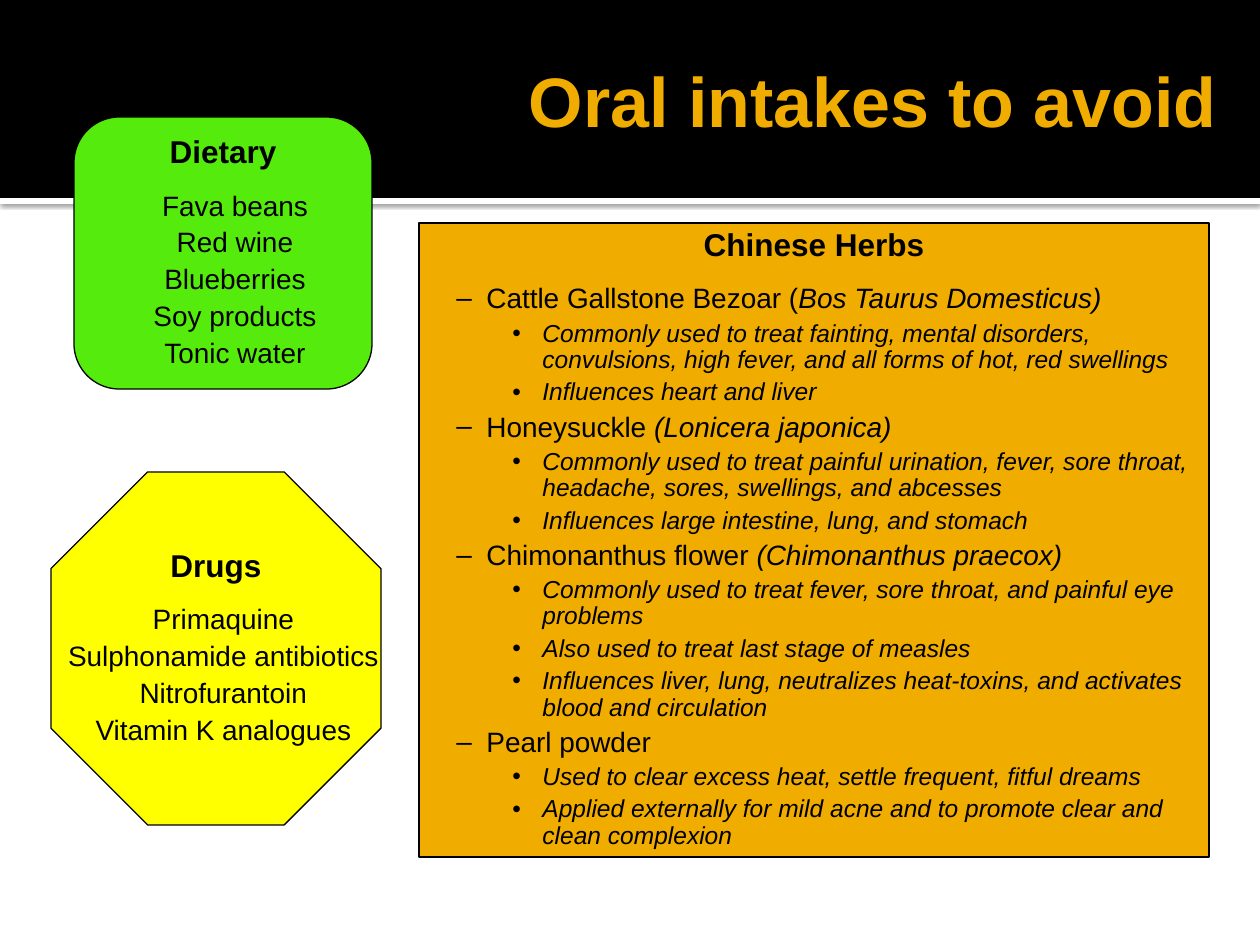
"""Build the slide on oral intakes to avoid."""
from pptx import Presentation
from pptx.dml.color import RGBColor
from pptx.enum.shapes import MSO_SHAPE as Kind
from pptx.enum.text import MSO_ANCHOR as Anchor, PP_ALIGN as Align
from pptx.oxml import parse_xml
from pptx.oxml.ns import nsdecls
from pptx.util import Inches, Pt

SCALE = Inches(1) / 126
BLACK, WHITE, GOLD = "000000", "FFFFFF", "F0AD00"


def box(kind, area, fill, line=None):
    shape = slide.shapes.add_shape(kind, *[round(n * SCALE) for n in area])
    shape.shadow.inherit = False
    shape.fill.solid()
    shape.fill.fore_color.rgb = RGBColor.from_string(fill)
    if line:
        shape.line.color.rgb = RGBColor.from_string(line)
        shape.line.width = Pt(0.75)
    else:
        shape.line.fill.background()
    return shape


def write(frame, texts, size, level, align, left=0, hang=0, mark=None):
    para = frame.paragraphs[0] if level == 0 else frame.add_paragraph()
    para.level = level
    para.alignment = align
    para.line_spacing = 0.9
    para.space_before = Pt(size * 0.24)
    para.space_after = Pt(0 if level else 8.5)
    para.font.size = Pt(size)
    para.font.name = "Arial"
    para.font.bold = level == 0
    para.font.color.rgb = RGBColor.from_string(BLACK)
    plain, slant = texts
    for text, tilt in ((plain, False), (slant, True)):
        if text:
            run = para.add_run()
            run.text = text
            run.font.size = Pt(size)
            run.font.name = "Arial"
            run.font.bold = level == 0
            run.font.italic = tilt
            run.font.color.rgb = RGBColor.from_string(BLACK)
    props = para._p.get_or_add_pPr()
    props.set("marL", str(round(left * SCALE)))
    props.set("indent", str(round(hang * SCALE)))
    if mark:
        props.append(parse_xml(f'<a:buFont {nsdecls("a")} typeface="Arial"/>'))
        props.append(parse_xml(f'<a:buChar {nsdecls("a")} char="{mark}"/>'))
        for tail in props.findall("{*}defRPr"):
            props.append(tail)


deck = Presentation()
deck.slide_width = Inches(10)
deck.slide_height = Inches(7.5)
slide = deck.slides.add_slide(deck.slide_layouts[5])

strip = box(Kind.RECTANGLE, (0, 198, 1260, 6), WHITE)
glow = parse_xml(
    f'<a:outerShdw {nsdecls("a")} blurRad="31750" dist="10160" dir="5400000" '
    'algn="tl" rotWithShape="0"><a:srgbClr val="000000"><a:alpha val="60000"/>'
    '</a:srgbClr></a:outerShdw>')
strip.element.spPr.find("{*}effectLst").append(glow)
box(Kind.RECTANGLE, (0, 0, 1260, 198), BLACK)

title = slide.shapes.title
title.left, title.top, title.width, title.height = [
    round(n * SCALE) for n in (428, 18, 795, 163)]
title.element.getparent().append(title.element)
frame = title.text_frame
frame.text = "Oral intakes to avoid"
frame.vertical_anchor = Anchor.MIDDLE
frame.margin_right = Inches(0.05)
para = frame.paragraphs[0]
para.alignment = Align.RIGHT
para.font.size = Pt(40)
para.font.name = "Arial"
para.font.bold = True
para.font.color.rgb = RGBColor.from_string(GOLD)

groups = [
    (Kind.ROUNDED_RECTANGLE, (74, 117, 298, 272), "55EC0D", 0.167, 47, -23, "Dietary",
     ["Fava beans", "Red wine", "Blueberries", "Soy products", "Tonic water"]),
    (Kind.OCTAGON, (51, 472, 330, 353), "FFFF00", 0.293, 15, 0, "Drugs",
     ["Primaquine", "Sulphonamide antibiotics", "Nitrofurantoin", "Vitamin K analogues"]),
]
for kind, area, fill, bend, left, hang, head, items in groups:
    shape = box(kind, area, fill, BLACK)
    shape.adjustments[0] = bend
    frame = shape.text_frame
    frame.word_wrap = False
    frame.vertical_anchor = Anchor.MIDDLE
    write(frame, (head, ""), 18, 0, Align.CENTER)
    for item in items:
        write(frame, (item, ""), 16, 1, Align.CENTER, left, hang)

herbs = [
    ("Cattle Gallstone Bezoar (", "Bos Taurus Domesticus)", [
        "Commonly used to treat fainting, mental disorders, convulsions, "
        "high fever, and all forms of hot, red swellings",
        "Influences heart and liver"]),
    ("Honeysuckle ", "(Lonicera japonica)", [
        "Commonly used to treat painful urination, fever, sore throat, "
        "headache, sores, swellings, and abcesses",
        "Influences large intestine, lung, and stomach"]),
    ("Chimonanthus flower ", "(Chimonanthus praecox)", [
        "Commonly used to treat fever, sore throat, and painful eye problems",
        "Also used to treat last stage of measles",
        "Influences liver, lung, neutralizes heat-toxins, and activates "
        "blood and circulation"]),
    ("Pearl powder", "", [
        "Used to clear excess heat, settle frequent, fitful dreams",
        "Applied externally for mild acne and to promote clear and "
        "clean complexion"]),
]
panel = box(Kind.RECTANGLE, (419, 223, 790, 634), GOLD, BLACK)
frame = panel.text_frame
frame.word_wrap = True
frame.vertical_anchor = Anchor.TOP
write(frame, ("Chinese Herbs", ""), 18, 0, Align.CENTER, 9, -9)
for name, latin, notes in herbs:
    write(frame, (name, latin), 16, 1, Align.LEFT, 55, -30, "–")
    for note in notes:
        write(frame, ("", note), 14, 2, Align.LEFT, 111, -30, "•")

deck.save("out.pptx")
